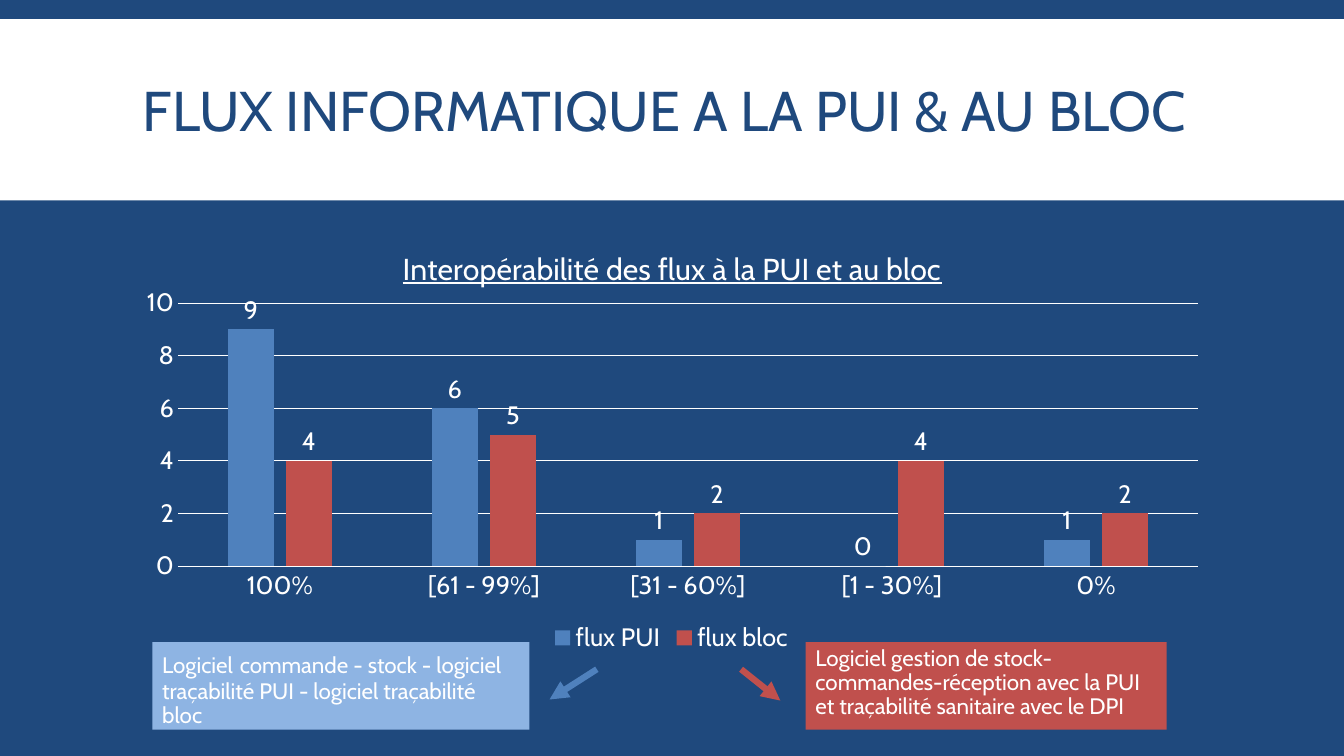
from lxml import etree
from pptx import Presentation
from pptx import util as u
from pptx.chart import data as chart_data
from pptx.dml import color
from pptx.enum import chart as ch, shapes, text
from pptx.oxml import ns, parse_xml

FONT = "Cabin"
NAVY, WHITE, BLUE, RED, SKY = "1F497D", "FFFFFF", "4F81BD", "C0504D", "8EB4E3"
WIDTH, HEIGHT = u.Inches(13.33), u.Inches(7.5)


def rgb(code):
    return color.RGBColor.from_string(code)


def across(percent):
    return round(WIDTH * percent / 100)


def down(percent):
    return round(HEIGHT * percent / 100)


def place(left, top, width, height):
    """Shares of the slide, in percent, as lengths."""
    return across(left), down(top), across(width), down(height)


def paint(fill, code):
    fill.solid()
    fill.fore_color.rgb = rgb(code)


def style_font(font, size, code=WHITE):
    font.name, font.size, font.bold = FONT, u.Pt(size), False
    font.color.rgb = rgb(code)


def add_block(page, area, code):
    block = page.shapes.add_shape(shapes.MSO_SHAPE.RECTANGLE, *place(*area))
    block.shadow.inherit = False
    paint(block.fill, code)
    block.line.fill.background()
    return block


def write(box, runs, code, spacing, anchor):
    frame = box.text_frame
    frame.word_wrap = True
    frame.vertical_anchor = anchor
    para = frame.paragraphs[0]
    para.alignment = text.PP_ALIGN.LEFT
    para.line_spacing = spacing
    for words, size in runs:
        span = para.add_run()
        span.text = words
        style_font(span.font, size, code)
    return para


def add_note(page, area, code, runs):
    block = add_block(page, area, code)
    para = write(block, runs, WHITE, 0.9, text.MSO_ANCHOR.TOP)
    para.space_before, para.space_after = u.Pt(12), u.Pt(2)


def add_arrow(page, start, end, code):
    arrow = page.shapes.add_connector(
        shapes.MSO_CONNECTOR.STRAIGHT,
        across(start[0]), down(start[1]), across(end[0]), down(end[1]))
    arrow.line.color.rgb = rgb(code)
    arrow.line.width = u.Pt(4.5)
    etree.SubElement(arrow.line._get_or_add_ln(), ns.qn("a:tailEnd"), type="triangle")
    etree.SubElement(arrow._element.spPr, ns.qn("a:effectLst"))


def set_layout(element, **shares):
    """Fix a chart part at shares of the chart's size."""
    for old in element.findall(ns.qn("c:layout")):
        element.remove(old)
    target = '<c:layoutTarget val="inner"/>' if "w" in shares else ""
    modes = "".join(f'<c:{k}Mode val="edge"/>' for k in shares if k in "xy")
    sizes = "".join(f'<c:{k} val="{v}"/>' for k, v in shares.items())
    layout = parse_xml(
        f'<c:layout {ns.nsdecls("c")}><c:manualLayout>{target}{modes}{sizes}'
        "</c:manualLayout></c:layout>")
    text_part = element.find(ns.qn("c:tx"))
    if text_part is None:
        element.insert(0, layout)
    else:
        text_part.addnext(layout)


def add_flow_chart(page, area, title, categories, flows):
    data = chart_data.CategoryChartData()
    data.categories = categories
    for name, values, _ in flows:
        data.add_series(name, values)
    chart = page.shapes.add_chart(
        ch.XL_CHART_TYPE.COLUMN_CLUSTERED, *place(*area), data).chart
    style_font(chart.font, 18)

    # Heading
    span = chart.chart_title.text_frame.paragraphs[0].add_run()
    span.text = title
    style_font(span.font, 21.6)
    span.font.underline = True
    chart.chart_title.include_in_layout = False
    set_layout(chart.chart_title._element, x=0.25, y=0.05)

    # Columns
    plot = chart.plots[0]
    plot.gap_width, plot.overlap, plot.vary_by_categories = 219, -27, False
    for series, (_, _, code) in zip(plot.series, flows):
        paint(series.format.fill, code)
        labels = series.data_labels
        labels.show_value = True
        labels.position = ch.XL_LABEL_POSITION.OUTSIDE_END
        style_font(labels.font, 18)
    set_layout(chart._chartSpace.chart.plotArea, x=0.05, y=0.19, w=0.93, h=0.6)

    # Axes and legend
    for axis in (chart.category_axis, chart.value_axis):
        axis.major_tick_mark = axis.minor_tick_mark = ch.XL_TICK_MARK.NONE
        style_font(axis.tick_labels.font, 18)
    scale = chart.value_axis
    scale.minimum_scale, scale.maximum_scale, scale.major_unit = 0, 10, 2
    scale.format.line.fill.background()
    for line in (chart.category_axis.format.line, scale.major_gridlines.format.line):
        line.color.rgb = rgb(WHITE)
        line.width = u.Pt(0.75)
    chart.has_legend = True
    chart.legend.position = ch.XL_LEGEND_POSITION.BOTTOM
    chart.legend.include_in_layout = False
    style_font(chart.legend.font, 18)


def main():
    deck = Presentation()
    deck.slide_width, deck.slide_height = WIDTH, HEIGHT
    page = deck.slides.add_slide(deck.slide_layouts[6])
    paint(page.background.fill, NAVY)

    # Title band
    add_block(page, (0, 2.53, 100, 24), WHITE)
    title = page.shapes.add_textbox(*place(9.9, 4.13, 80.27, 22))
    write(title, [("FLUX INFORMATIQUE A LA PUI & AU BLOC", 40)],
          NAVY, 0.85, text.MSO_ANCHOR.MIDDLE)

    # Software behind each flow
    add_note(page, (11.33, 84.93, 28.06, 11.6), SKY, [
        ("Logiciel", 16), (" ", 22),
        ("commande - stock - logiciel traçabilité PUI - logiciel traçabilité bloc", 16)])
    add_note(page, (59.94, 84.93, 26.86, 11.6), RED, [
        ("Logiciel gestion de stock-commandes-réception avec la PUI "
         "et traçabilité sanitaire avec le DPI", 16)])
    add_arrow(page, (44.41, 88.53), (40.89, 92.53), BLUE)
    add_arrow(page, (55.14, 88.53), (58.06, 92.67), RED)

    # Interoperability chart
    add_flow_chart(
        page, (9.15, 29.07, 81.62, 58),
        "Interopérabilité des flux à la PUI et au bloc",
        ["100%", "[61 - 99%]", "[31 - 60%]", "[1 - 30%]", "0%"],
        [("flux PUI", (9, 6, 1, 0, 1), BLUE), ("flux bloc", (4, 5, 2, 4, 2), RED)])

    deck.save("out.pptx")


if __name__ == "__main__":
    main()
